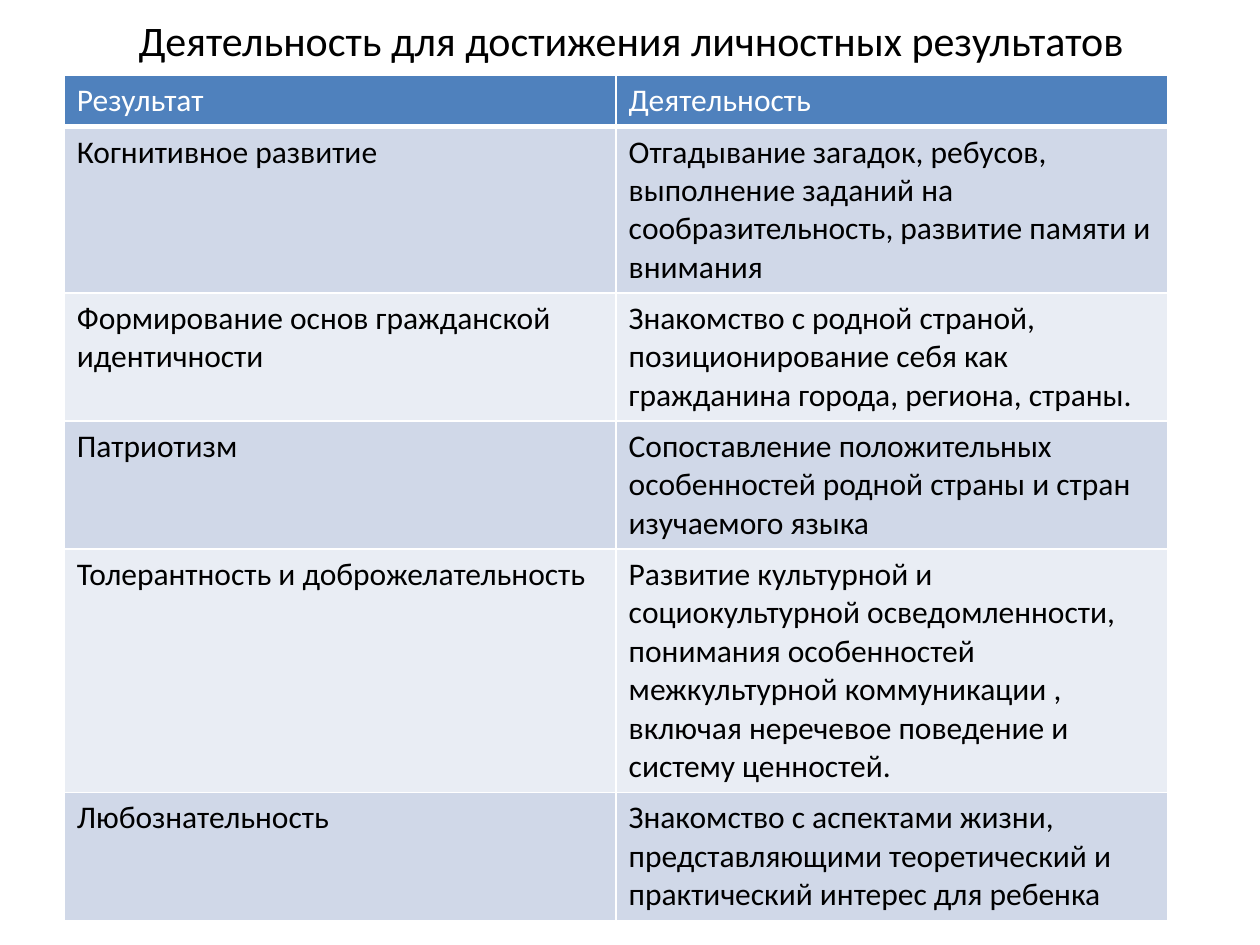
from dataclasses import dataclass

from lxml import etree
from pptx import Presentation
from pptx.dml.color import RGBColor
from pptx.enum.text import MSO_ANCHOR, PP_ALIGN
from pptx.oxml.ns import qn
from pptx.util import Inches, Pt

CENTER = PP_ALIGN.CENTER
MIDDLE = MSO_ANCHOR.MIDDLE
TITLE_ONLY = 5


@dataclass
class Theme:
    font: str = "Calibri"
    title: int = 24
    body: int = 18
    ink: str = "000000"
    paper: str = "FFFFFF"
    head: str = "4F81BD"
    bands: tuple = ("D0D8E8", "E9EDF4")
    thin: int = 1
    thick: int = 3


class Deck:
    def __init__(self, theme, width, height):
        self.theme = theme
        self.file = Presentation()
        self.file.slide_width = Inches(width)
        self.file.slide_height = Inches(height)
        self.slide = self.file.slides.add_slide(
            self.file.slide_layouts[TITLE_ONLY])

    def place(self, left, top, width, height):
        """Turn shares of the slide into lengths."""
        w, h = self.file.slide_width, self.file.slide_height
        return int(left * w), int(top * h), int(width * w), int(height * h)

    def style(self, frame, size, color):
        for para in frame.paragraphs:
            for run in para.runs:
                font = run.font
                font.name = self.theme.font
                font.size = Pt(size)
                font.bold = False
                font.color.rgb = RGBColor.from_string(color)

    def title(self, text, box):
        shape = self.slide.shapes.title
        shape.left, shape.top, shape.width, shape.height = self.place(*box)
        frame = shape.text_frame
        frame.text = text
        frame.vertical_anchor = MIDDLE
        frame.paragraphs[0].alignment = CENTER
        self.style(frame, self.theme.title, self.theme.ink)

    def edges(self, cell, base):
        """Draw the four borders; base is the width of the lower one."""
        props = cell._tc.get_or_add_tcPr()
        thin = self.theme.thin
        sides = {"L": thin, "R": thin, "T": thin, "B": base}
        for spot, (side, width) in enumerate(sides.items()):
            line = etree.Element(qn("a:ln" + side), w=str(Pt(width)))
            fill = etree.SubElement(line, qn("a:solidFill"))
            etree.SubElement(fill, qn("a:srgbClr"), val=self.theme.paper)
            props.insert(spot, line)

    def table(self, rows, box, shares):
        theme = self.theme
        place = self.place(*box)
        grid = self.slide.shapes.add_table(
            len(rows), len(rows[0]), *place).table
        for r, (texts, share) in enumerate(zip(rows, shares)):
            grid.rows[r].height = int(place[3] * share / sum(shares))
            top = r == 0
            fill = theme.head if top else theme.bands[(r - 1) % 2]
            color = theme.paper if top else theme.ink
            for c, text in enumerate(texts):
                cell = grid.cell(r, c)
                cell.text_frame.text = text
                cell.fill.solid()
                cell.fill.fore_color.rgb = RGBColor.from_string(fill)
                self.style(cell.text_frame, theme.body, color)
                self.edges(cell, theme.thick if top else theme.thin)


ROWS = [
    ("Результат", "Деятельность"),
    ("Когнитивное развитие",
     "Отгадывание загадок, ребусов, выполнение заданий на "
     "сообразительность, развитие памяти и внимания"),
    ("Формирование основ гражданской идентичности",
     "Знакомство с родной страной, позиционирование себя как "
     "гражданина города, региона, страны."),
    ("Патриотизм",
     "Сопоставление положительных особенностей родной страны и стран "
     "изучаемого языка"),
    ("Толерантность и доброжелательность",
     "Развитие культурной и социокультурной осведомленности, понимания "
     "особенностей межкультурной коммуникации , включая неречевое "
     "поведение и систему ценностей."),
    ("Любознательность",
     "Знакомство с аспектами жизни, представляющими теоретический и "
     "практический интерес для ребенка"),
]


def main():
    deck = Deck(Theme(), 10, 7.5)
    # Heading
    deck.title("Деятельность для достижения личностных результатов",
               (0.051, 0, 0.9, 0.084))
    # Results and activities; rows grow to fit their text
    deck.table(ROWS, (0.051, 0.08, 0.876, 0.81),
               (0.39, 0.96, 0.96, 0.96, 1.83, 0.96))
    deck.file.save("out.pptx")


if __name__ == "__main__":
    main()
